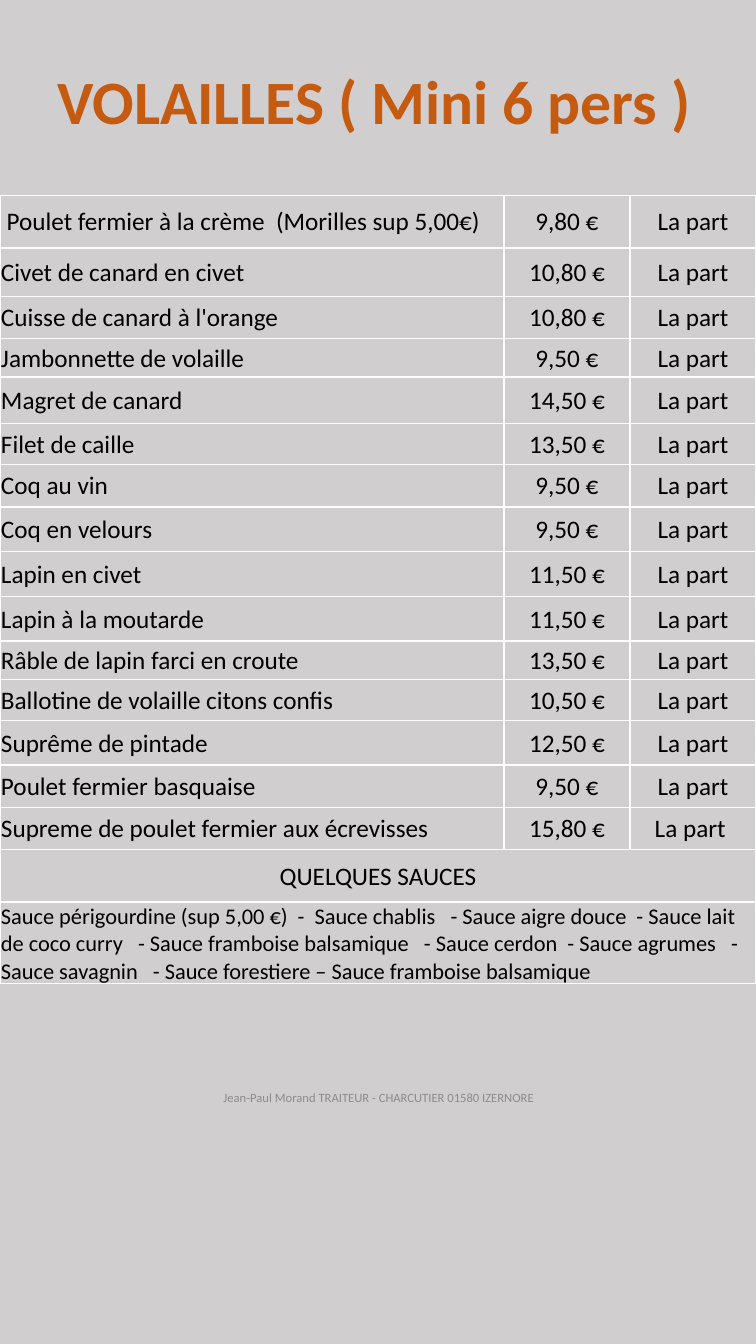
"""Build the poultry menu slide with its price table."""
from dataclasses import dataclass
from typing import Any

from lxml import etree
from pptx import Presentation
from pptx.dml.color import RGBColor
from pptx.enum.text import MSO_ANCHOR, MSO_AUTO_SIZE, PP_ALIGN
from pptx.oxml.ns import qn
from pptx.util import Pt

PX = 9144
WIDTH, HEIGHT = 750, 1333
LEFT, CENTER = PP_ALIGN.LEFT, PP_ALIGN.CENTER
MIDDLE, TOP = MSO_ANCHOR.MIDDLE, MSO_ANCHOR.TOP
FIT, FIXED = MSO_AUTO_SIZE.SHAPE_TO_FIT_TEXT, MSO_AUTO_SIZE.NONE
GREY = RGBColor(0xD0, 0xCE, 0xCE)
ORANGE = RGBColor(0xC5, 0x5A, 0x11)
PALE = RGBColor(0x8C, 0x8C, 0x8C)
BLACK = RGBColor(0, 0, 0)
WHITE = RGBColor(0xFF, 0xFF, 0xFF)
SIDES = ("a:lnL", "a:lnR", "a:lnT", "a:lnB")
COLS = (500, 125, 125)
CELL = {"margin_left": PX, "margin_right": PX, "margin_top": PX,
        "margin_bottom": 0, "vertical_anchor": MIDDLE}
PLAIN = {"first_row": False, "horz_banding": False}


@dataclass(frozen=True)
class Style:
    """Look of a line of text."""
    size: int
    color: RGBColor
    align: PP_ALIGN = LEFT
    bold: bool = False


@dataclass(frozen=True)
class Label:
    """Text box with its place in px."""
    text: str
    left: int
    top: int
    width: int
    height: int
    style: Style
    frame: dict[str, Any]


@dataclass(frozen=True)
class Dish:
    """Menu row with its height in px."""
    name: str
    price: str
    height: int
    unit: str = "La part"


@dataclass(frozen=True)
class Band:
    """Full-width row with its height in px."""
    text: str
    height: int
    style: Style


NAME = Style(18, BLACK)
MID = Style(18, BLACK, CENTER)
LABELS = (
    Label("Jean-Paul Morand TRAITEUR - CHARCUTIER 01580 IZERNORE",
          192, 1053, 367, 71, Style(9, PALE, CENTER),
          {"vertical_anchor": MIDDLE, "word_wrap": True, "auto_size": FIXED}),
    Label("VOLAILLES ( Mini 6 pers )",
          47, 57, 655, 84, Style(44, ORANGE, LEFT, True),
          {"vertical_anchor": TOP, "word_wrap": False, "auto_size": FIT}),
)
DISHES = (
    Dish(" Poulet fermier à la crème  (Morilles sup 5,00€)", "9,80 €", 52),
    Dish("Civet de canard en civet", "10,80 €", 48),
    Dish("Cuisse de canard à l'orange", "10,80 €", 42),
    Dish("Jambonnette de volaille", "9,50 €", 38),
    Dish("Magret de canard", "14,50 €", 46),
    Dish("Filet de caille", "13,50 €", 41),
    Dish("Coq au vin", "9,50 €", 42),
    Dish("Coq en velours", "9,50 €", 44),
    Dish("Lapin en civet", "11,50 €", 45),
    Dish("Lapin à la moutarde", "11,50 €", 44),
    Dish("Râble de lapin farci en croute", "13,50 €", 38),
    Dish("Ballotine de volaille citons confis", "10,50 €", 41),
    Dish("Suprême de pintade", "12,50 €", 44),
    Dish("Poulet fermier basquaise", "9,50 €", 42),
    Dish("Supreme de poulet fermier aux écrevisses", "15,80 €", 42, "La part "),
)
BANDS = (
    Band("QUELQUES SAUCES", 52, MID),
    Band("Sauce périgourdine (sup 5,00 €)  -  Sauce chablis   - Sauce aigre douce"
         "  - Sauce lait de coco curry   - Sauce framboise balsamique   - Sauce cerdon"
         "  - Sauce agrumes   - Sauce savagnin   - Sauce forestiere"
         " – Sauce framboise balsamique", 80, Style(16, BLACK)),
)


def apply(target: Any, values: dict[str, Any]) -> None:
    """Set each named attribute on the target."""
    for key, value in values.items():
        setattr(target, key, value)


def write(frame: Any, text: str, style: Style) -> None:
    """Put one styled line in a text frame."""
    line = frame.paragraphs[0]
    line.alignment = style.align
    run = line.add_run()
    run.text = text
    apply(run.font, {"name": "Calibri", "size": Pt(style.size), "bold": style.bold})
    run.font.color.rgb = style.color


def add_label(slide: Any, label: Label) -> None:
    """Draw a text box."""
    place = (label.left, label.top, label.width, label.height)
    frame = slide.shapes.add_textbox(*(n * PX for n in place)).text_frame
    apply(frame, label.frame)
    write(frame, label.text, label.style)


def edge(cell: Any) -> None:
    """Give a cell thin white borders."""
    props = cell._tc.get_or_add_tcPr()
    for spot, side in enumerate(SIDES):
        line = etree.Element(qn(side), w=str(Pt(1)))
        fill = etree.SubElement(line, qn("a:solidFill"))
        etree.SubElement(fill, qn("a:srgbClr"), val=str(WHITE))
        props.insert(spot, line)


def add_menu(slide: Any) -> None:
    """Draw the price table."""
    rows = DISHES + BANDS
    tall = sum(row.height for row in rows)
    table = slide.shapes.add_table(
        len(rows), len(COLS), 0, 194 * PX, WIDTH * PX, tall * PX).table
    apply(table, PLAIN)
    for col, width in zip(table.columns, COLS):
        col.width = width * PX
    for row, item in zip(table.rows, rows):
        row.height = item.height * PX
    for cell in table.iter_cells():
        apply(cell, CELL)
        cell.fill.solid()
        cell.fill.fore_color.rgb = GREY
        edge(cell)
    for num, dish in enumerate(DISHES):
        texts = (dish.name, dish.price, dish.unit)
        for col, (text, style) in enumerate(zip(texts, (NAME, MID, MID))):
            write(table.cell(num, col).text_frame, text, style)
    for num, band in enumerate(BANDS, len(DISHES)):
        cell = table.cell(num, 0)
        cell.merge(table.cell(num, len(COLS) - 1))
        write(cell.text_frame, band.text, band.style)


def main() -> None:
    """Build and save the slide."""
    deck = Presentation()
    apply(deck, {"slide_width": WIDTH * PX, "slide_height": HEIGHT * PX})
    slide = deck.slides.add_slide(deck.slide_layouts[6])
    back = slide.background.fill
    back.solid()
    back.fore_color.rgb = GREY
    for label in LABELS:
        add_label(slide, label)
    add_menu(slide)
    deck.save("out.pptx")


if __name__ == "__main__":
    main()
